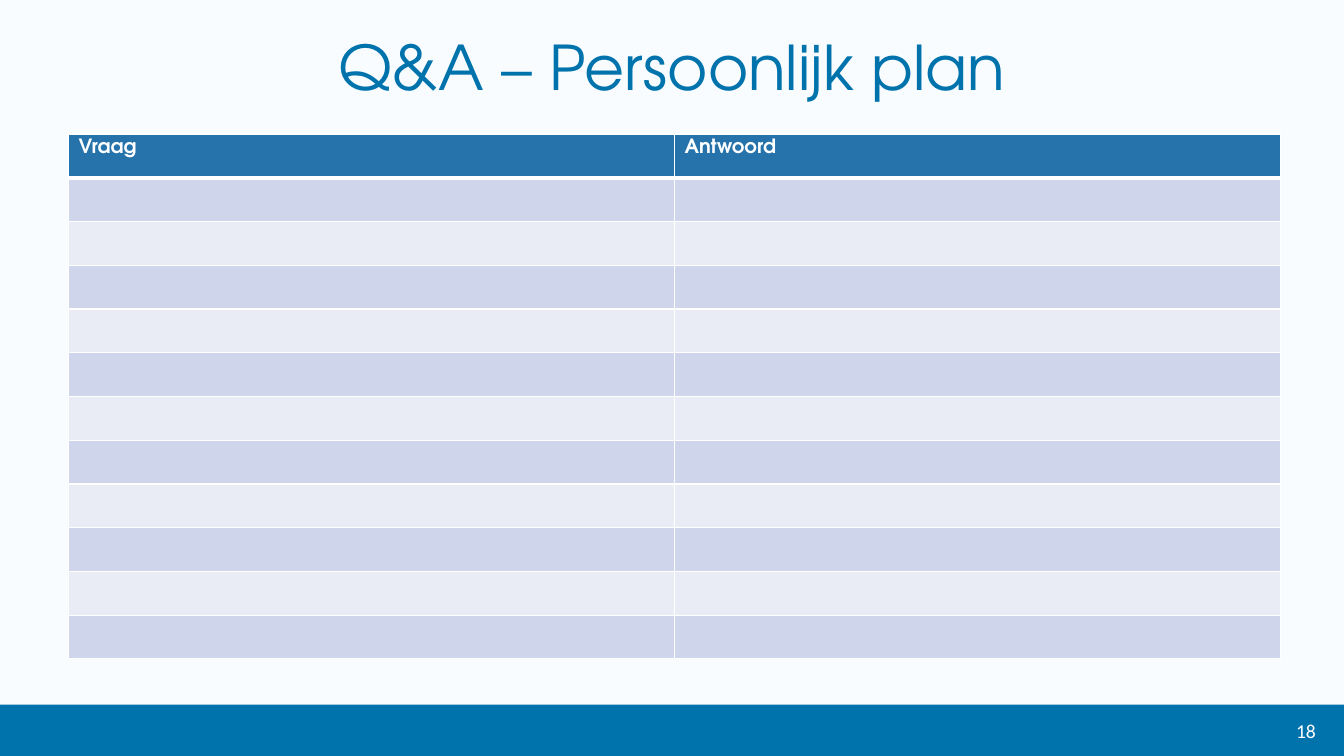
import pptx
import pptx.dml.color
import pptx.enum.shapes
import pptx.enum.text
import pptx.oxml
import pptx.oxml.ns
import pptx.util

Inches, Pt = pptx.util.Inches, pptx.util.Pt
RGBColor = pptx.dml.color.RGBColor
PP_ALIGN = pptx.enum.text.PP_ALIGN
ANCHOR = pptx.enum.text.MSO_ANCHOR

PAPER = RGBColor(0xF9, 0xFC, 0xFF)
BLUE = RGBColor(0x00, 0x73, 0xAC)
HEADER = RGBColor(0x26, 0x73, 0xAC)
BANDS = [RGBColor(0xE9, 0xEB, 0xF5), RGBColor(0xCF, 0xD5, 0xEA)]
WHITE = RGBColor(0xFF, 0xFF, 0xFF)
FONT = "TeX Gyre Adventor"
HEADINGS = ["Vraag", "Antwoord"]
ROWS = 12
TABLE_W, TABLE_H = 12.02, 5.21


def add_text(box, text, size, font, color, align, anchor, inset):
    sp = s.shapes.add_textbox(*map(Inches, box))
    tf = sp.text_frame
    tf.word_wrap = True
    tf.vertical_anchor = anchor
    tf.margin_left = tf.margin_right = Inches(inset[0])
    tf.margin_top = tf.margin_bottom = Inches(inset[1])
    p = tf.paragraphs[0]
    p.text = text
    p.alignment = align
    r = p.runs[0]
    r.font.size, r.font.name, r.font.color.rgb = Pt(size), font, color
    return p


def add_borders(cell, widths):
    """Draw white cell borders; widths maps a side (L, R, T, B) to points."""
    tcPr = cell._tc.get_or_add_tcPr()
    for side, width in widths.items():
        tcPr.append(pptx.oxml.parse_xml(
            f'<a:ln{side} {pptx.oxml.ns.nsdecls("a")} w="{Pt(width)}">'
            f'<a:solidFill><a:srgbClr val="{WHITE}"/></a:solidFill></a:ln{side}>'))


prs = pptx.Presentation()
prs.slide_width, prs.slide_height = Inches(13.33), Inches(7.5)
s = prs.slides.add_slide(prs.slide_layouts[6])
s.background.fill.solid()
s.background.fill.fore_color.rgb = PAPER

# Footer bar and page number
bar_h = Inches(0.51)
bar = s.shapes.add_shape(pptx.enum.shapes.MSO_SHAPE.RECTANGLE,
                         0, prs.slide_height - bar_h, prs.slide_width, bar_h)
bar.shadow.inherit = False
bar.fill.solid()
bar.fill.fore_color.rgb = BLUE
bar.line.fill.background()
add_text((10.82, 7.1, 2.33, 0.3), "18", 14, "Calibri", WHITE,
         PP_ALIGN.RIGHT, ANCHOR.MIDDLE, (0.1, 0.05))

# Title
title = add_text((0.26, 0.3, 12.81, 0.78), "Q&A – Persoonlijk plan", 44, FONT, BLUE,
                 PP_ALIGN.CENTER, ANCHOR.TOP, (0.13, 0.07))
title.line_spacing = 0.9

# Question and answer table
table = s.shapes.add_table(ROWS, len(HEADINGS), Inches(0.68), Inches(1.33),
                           Inches(TABLE_W), Inches(TABLE_H)).table
for column in table.columns:
    column.width = Inches(TABLE_W / len(HEADINGS))
for i, row in enumerate(table.rows):
    row.height = Inches(TABLE_H / ROWS)
    for cell in row.cells:
        add_borders(cell, {"L": 1, "R": 1, "T": 3 if i == 1 else 1, "B": 3 if i == 0 else 1})
        cell.fill.solid()
        cell.fill.fore_color.rgb = BANDS[i % 2] if i else HEADER

for cell, heading in zip(table.rows[0].cells, HEADINGS):
    p = cell.text_frame.paragraphs[0]
    p.text = heading
    r = p.runs[0]
    r.font.size, r.font.name, r.font.bold = Pt(14), FONT, True
    r.font.color.rgb = WHITE

prs.save("out.pptx")
